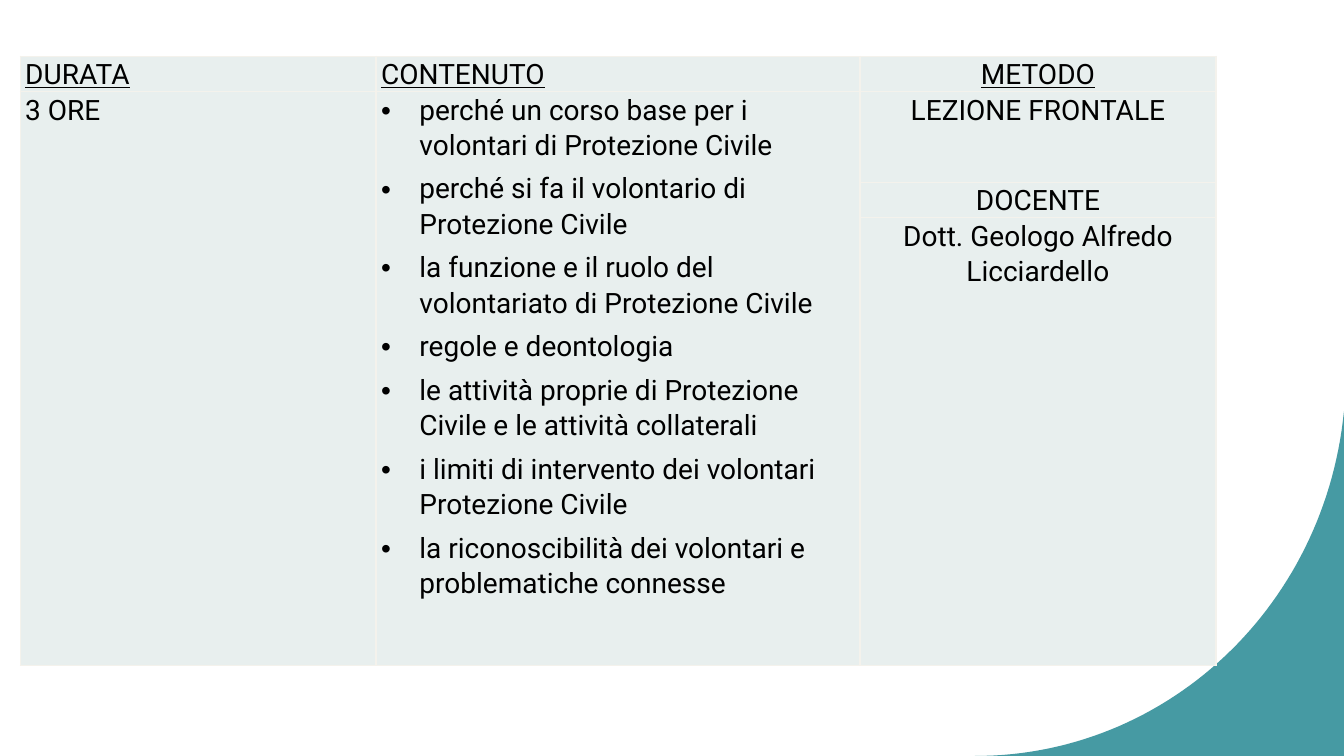
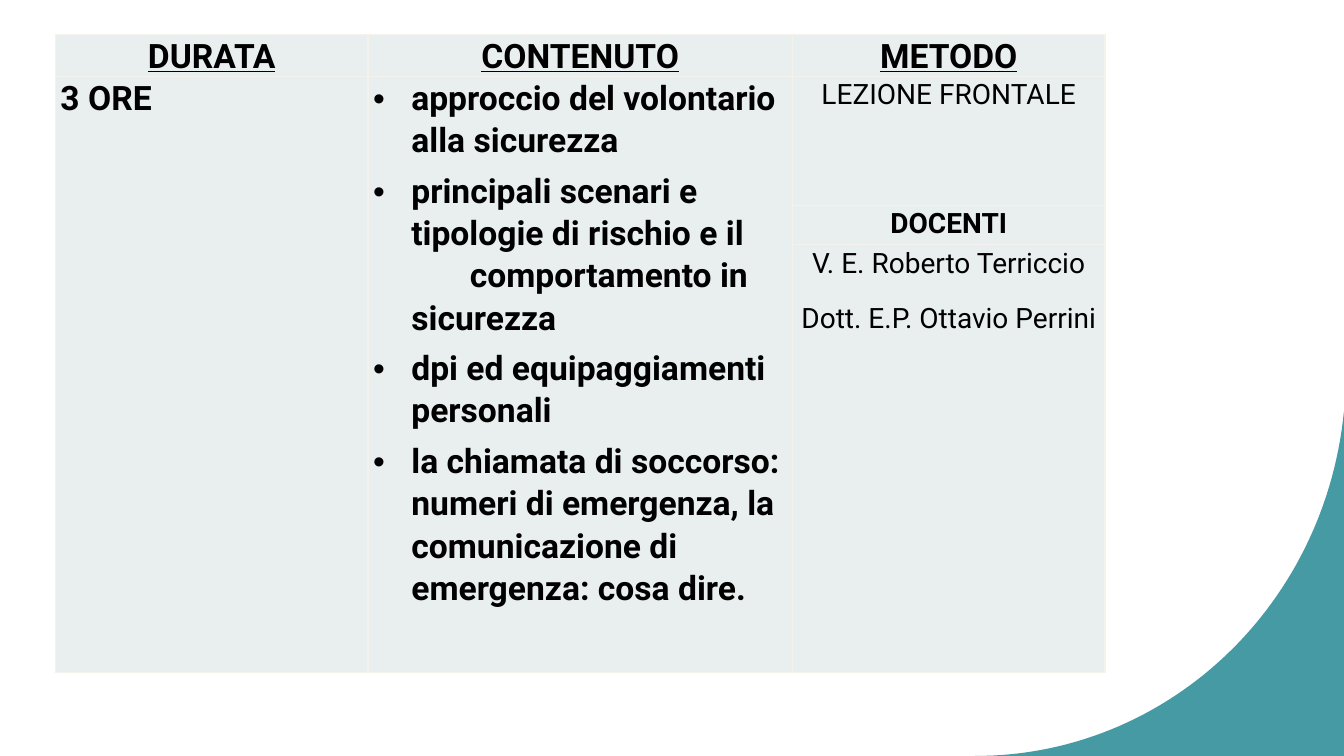
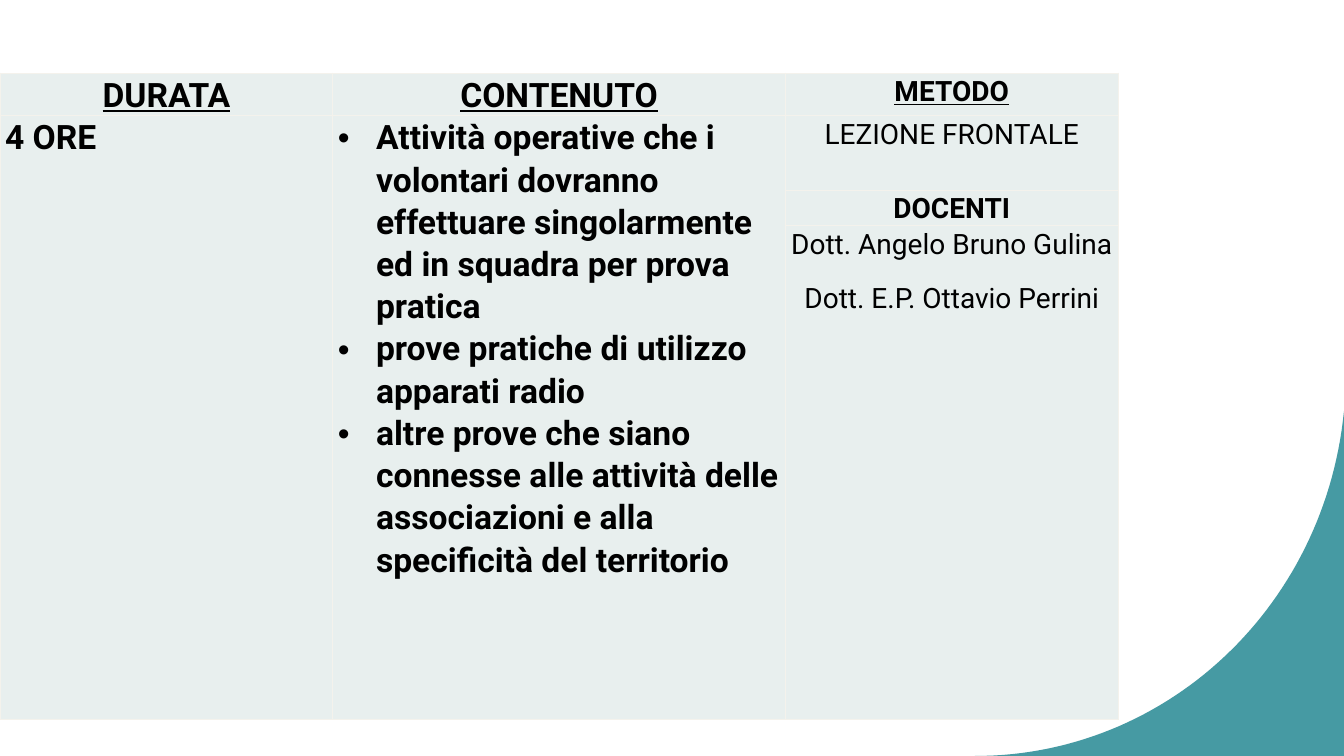
import pptx
import pptx.util
import pptx.dml.color
import pptx.enum.text
import pptx.oxml
import pptx.oxml.ns

Inches = pptx.util.Inches
Pt = pptx.util.Pt
RGBColor = pptx.dml.color.RGBColor
ALIGN = pptx.enum.text.PP_ALIGN
qn = pptx.oxml.ns.qn
NS = pptx.oxml.ns.nsdecls("a")

TEAL = RGBColor(0x18, 0x81, 0x8C)
PALE = RGBColor(0xE8, 0xEF, 0xEE)
IVORY = RGBColor(0xF4, 0xF2, 0xEC)
BLACK = RGBColor(0, 0, 0)

PLAIN = {"size": Pt(20), "bold": False, "underline": False}
BOLD = PLAIN | {"bold": True}
LARGE = BOLD | {"size": Pt(24)}
UNDERLINED = {"underline": True}
SPACED = {"line_spacing": 1.07, "space_before": Pt(6), "space_after": Pt(8)}
CENTRED = SPACED | {"alignment": ALIGN.CENTER}
HANGING = 0.38
CONTINUED = 0.58

LESSONS = [
    {
        "box": (0.2, 0.56, 11.85), "cols": (3.53, 4.8, 3.53), "rows": (0.35, 0.9, 0.35, 4.44),
        "body": PLAIN, "method_head": PLAIN, "teacher_head": PLAIN,
        "head_format": SPACED, "gap": 6,
        "duration": "3 ORE",
        "topics": [
            "perché un corso base per i volontari di Protezione Civile",
            "perché si fa il volontario di Protezione Civile",
            "la funzione e il ruolo del volontariato di Protezione Civile",
            "regole e deontologia",
            "le attività proprie di Protezione Civile e le attività collaterali",
            "i limiti di intervento dei volontari Protezione Civile",
            "la riconoscibilità dei volontari e problematiche connesse",
        ],
        "role": "DOCENTE", "teachers": ["Dott. Geologo Alfredo Licciardello"],
    },
    {
        "box": (0.55, 0.34, 10.4), "cols": (3.1, 4.21, 3.1), "rows": (0.42, 1.28, 0.39, 4.24),
        "body": LARGE, "method_head": LARGE, "teacher_head": BOLD,
        "head_format": CENTRED, "gap": 6,
        "duration": "3 ORE",
        "topics": [
            "approccio del volontario alla sicurezza",
            "principali scenari e tipologie di rischio e il\ncomportamento in sicurezza",
            "dpi ed equipaggiamenti personali",
            "la chiamata di soccorso: numeri di emergenza, la comunicazione di emergenza: cosa dire.",
        ],
        "role": "DOCENTI", "teachers": ["V. E. Roberto Terriccio", "Dott. E.P. Ottavio Perrini"],
    },
    {
        "box": (0, 0.73, 11.1), "cols": (3.3, 4.49, 3.3), "rows": (0.42, 0.74, 0.35, 4.9),
        "body": LARGE, "method_head": BOLD, "teacher_head": BOLD,
        "head_format": CENTRED, "gap": 0,
        "duration": "4 ORE",
        "topics": [
            "Attività operative che i volontari dovranno effettuare singolarmente ed in squadra per prova pratica",
            "prove pratiche di utilizzo apparati radio",
            "altre prove che siano connesse alle attività delle associazioni e alla specificità del territorio",
        ],
        "role": "DOCENTI", "teachers": ["Dott. Angelo Bruno Gulina", "Dott. E.P. Ottavio Perrini"],
    },
]


def apply(target, values):
    for name, value in values.items():
        setattr(target, name, value)


def write(p, text, font, layout):
    apply(p, layout)
    r = p.add_run()
    r.text = text
    apply(r.font, font | {"name": "Roboto"})
    r.font.color.rgb = BLACK


def fill_cell(cell, texts, font, layout):
    tf = cell.text_frame
    for i, text in enumerate(texts):
        p = tf.add_paragraph() if i else tf.paragraphs[0]
        write(p, text, font, layout)


def indent(p, first):
    pPr = p._p.get_or_add_pPr()
    pPr.set("marL", str(Inches(HANGING)))
    pPr.set("indent", str(Inches(first)))
    return pPr


def fill_topics(cell, topics, font, gap):
    tf = cell.text_frame
    p = tf.paragraphs[0]
    for i, topic in enumerate(topics):
        for j, text in enumerate(topic.split("\n")):
            if i or j:
                p = tf.add_paragraph()
            space = Pt(0) if j else Pt(gap)
            write(p, text, font, {"line_spacing": 1.07, "space_before": space})
            pPr = indent(p, CONTINUED if j else -HANGING)
            if not j:
                pPr.append(pptx.oxml.parse_xml(f'<a:buFont {NS} typeface="Arial"/>'))
                pPr.append(pptx.oxml.parse_xml(f'<a:buChar {NS} char="•"/>'))


def style_cell(cell):
    tcPr = cell._tc.get_or_add_tcPr()
    for side in "LRTB":
        tcPr.append(pptx.oxml.parse_xml(
            f'<a:ln{side} {NS} w="{Pt(1)}"><a:solidFill><a:srgbClr val="{IVORY}"/>'
            f'</a:solidFill></a:ln{side}>'))
    cell.fill.solid()
    cell.fill.fore_color.rgb = PALE
    apply(cell, {"margin_left": Inches(0.05), "margin_right": Inches(0.05),
                 "margin_top": 0, "margin_bottom": 0})


def add_lesson(s, lesson):
    left, top, width = lesson["box"]
    rows, cols = lesson["rows"], lesson["cols"]
    table = s.shapes.add_table(len(rows), len(cols), Inches(left), Inches(top),
                               Inches(width), Inches(sum(rows))).table
    apply(table, {"first_row": False, "horz_banding": False})
    for col, size in zip(table.columns, cols):
        col.width = Inches(size)
    for row, size in zip(table.rows, rows):
        row.height = Inches(size)
    for cell in table.iter_cells():
        style_cell(cell)
    for col in (0, 1):
        table.cell(1, col).merge(table.cell(3, col))

    body, head = lesson["body"], lesson["head_format"]
    fill_cell(table.cell(0, 0), ["DURATA"], body | UNDERLINED, head)
    fill_cell(table.cell(0, 1), ["CONTENUTO"], body | UNDERLINED, head)
    fill_cell(table.cell(0, 2), ["METODO"], lesson["method_head"] | UNDERLINED, CENTRED)
    fill_cell(table.cell(1, 0), [lesson["duration"]], body, SPACED)
    fill_topics(table.cell(1, 1), lesson["topics"], body, lesson["gap"])
    fill_cell(table.cell(1, 2), ["LEZIONE FRONTALE"], PLAIN, CENTRED)
    fill_cell(table.cell(2, 2), [lesson["role"]], lesson["teacher_head"], CENTRED)
    fill_cell(table.cell(3, 2), lesson["teachers"], PLAIN, CENTRED)


def bezier(points, t):
    weights = ((1 - t) ** 3, 3 * t * (1 - t) ** 2, 3 * t ** 2 * (1 - t), t ** 3)
    return tuple(Inches(sum(w * pt[axis] for w, pt in zip(weights, points))) for axis in (0, 1))


def add_corner(s, layout, right, bottom):
    curve = [(right - 3.66, bottom), (right - 1.76, bottom),
             (right - 0.19, bottom - 1.48), (right, bottom - 3.42)]
    steps = 60
    outline = [bezier(curve, i / steps) for i in range(steps + 1)]
    builder = s.shapes.build_freeform(*outline[0])
    builder.add_line_segments(outline[1:] + [(Inches(right), Inches(bottom))], close=True)
    sp = builder.convert_to_shape()
    sp.shadow.inherit = False
    sp.fill.solid()
    sp.fill.fore_color.rgb = TEAL
    sp.line.fill.background()
    color = sp._element.spPr.find(qn("a:solidFill")).find(qn("a:srgbClr"))
    color.append(pptx.oxml.parse_xml(f'<a:alpha {NS} val="80000"/>'))
    layout.shapes._spTree.append(sp._element)


def main():
    prs = pptx.Presentation()
    prs.slide_width, prs.slide_height = Inches(13.33), Inches(7.5)
    blank = prs.slide_layouts[6]
    slides = [prs.slides.add_slide(blank) for _ in LESSONS]
    add_corner(slides[0], blank, 13.33, 7.5)
    for s, lesson in zip(slides, LESSONS):
        add_lesson(s, lesson)
    prs.save("out.pptx")


if __name__ == "__main__":
    main()
